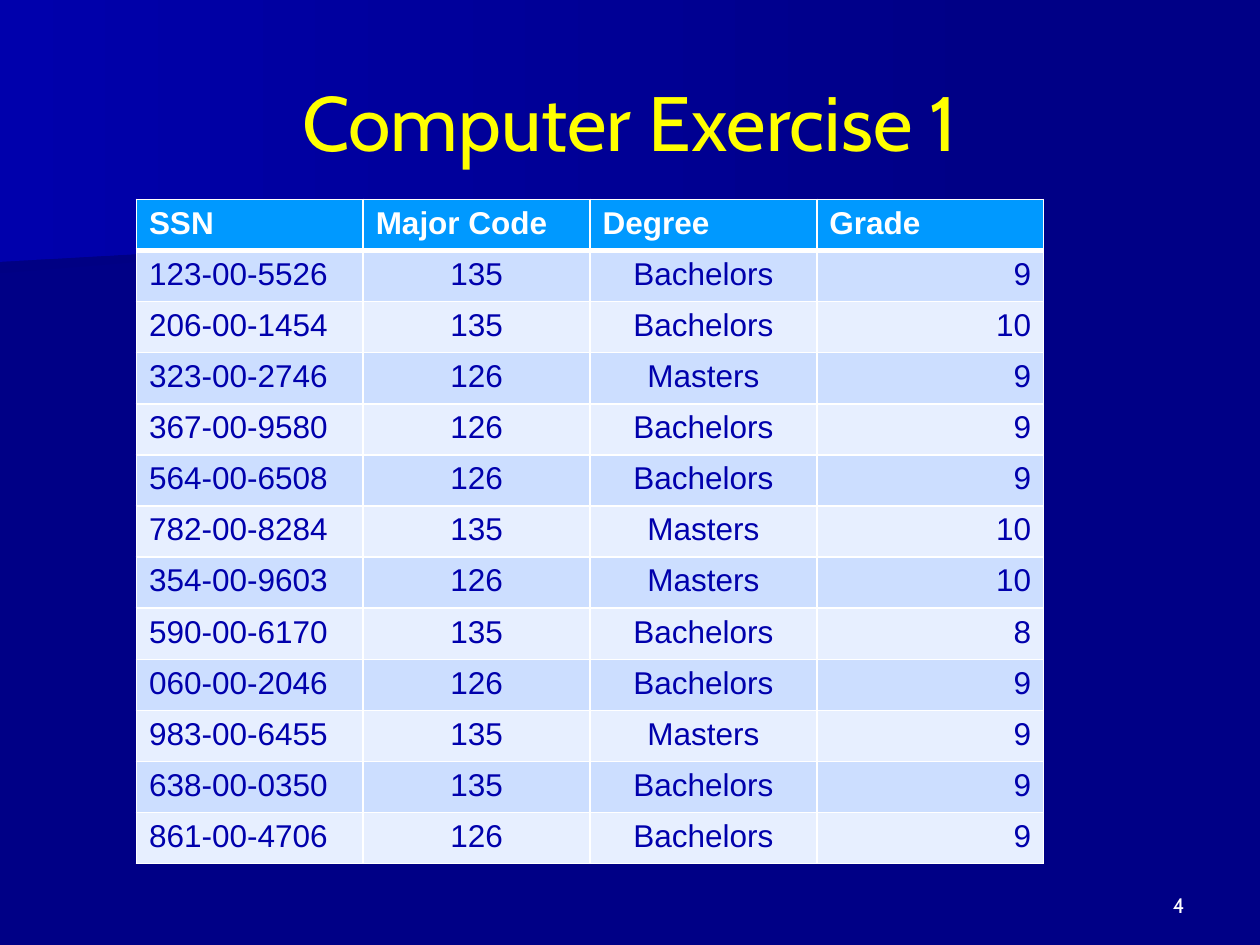
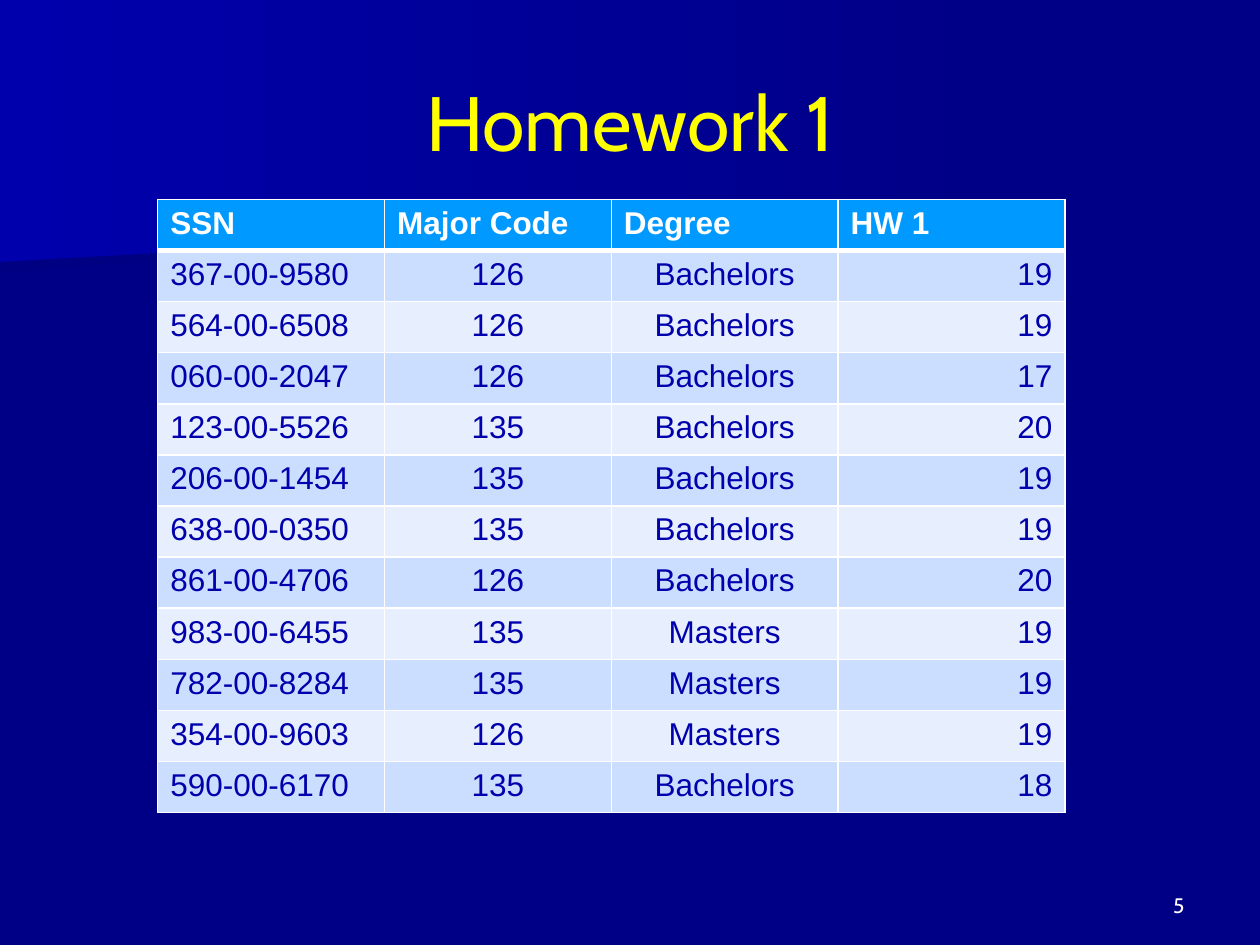
from dataclasses import dataclass

from lxml.etree import SubElement as Sub
from pptx import Presentation
from pptx.dml.color import RGBColor as RGB
from pptx.enum.text import MSO_ANCHOR as Anchor, PP_ALIGN as Align
from pptx.oxml.ns import qn
from pptx.util import Cm, Pt


@dataclass(frozen=True)
class Theme:
    """Colours, fonts and type sizes of the deck."""
    back: str = "000086"
    shade: str = "000083"
    glow: str = "0000AC"
    title: str = "FFFF00"
    white: str = "FFFFFF"
    head: str = "0099FF"
    odd: str = "CCDEFF"
    even: str = "E7EFFF"
    ink: str = "0000AC"
    sans: str = "Cabin"
    grid: str = "Arial"
    big: int = 44
    mid: int = 18
    small: int = 12


THEME = Theme()

BANDS = [
    (THEME.shade, [(19.77, 3.89), (0, 5.51), (0, 2.57), (19.79, 2.57), (19.77, 3.25)]),
    (THEME.glow, [(20.12, 4.11), (0, 5.28), (0, 0), (20.12, 0)]),
]

ALIGNS = [Align.LEFT, Align.CENTER, Align.CENTER, Align.RIGHT]

EXERCISE = [
    ("SSN", "Major Code", "Degree", "Grade"),
    ("123-00-5526", "135", "Bachelors", "9"),
    ("206-00-1454", "135", "Bachelors", "10"),
    ("323-00-2746", "126", "Masters", "9"),
    ("367-00-9580", "126", "Bachelors", "9"),
    ("564-00-6508", "126", "Bachelors", "9"),
    ("782-00-8284", "135", "Masters", "10"),
    ("354-00-9603", "126", "Masters", "10"),
    ("590-00-6170", "135", "Bachelors", "8"),
    ("060-00-2046", "126", "Bachelors", "9"),
    ("983-00-6455", "135", "Masters", "9"),
    ("638-00-0350", "135", "Bachelors", "9"),
    ("861-00-4706", "126", "Bachelors", "9"),
]

HOMEWORK = [
    ("SSN", "Major Code", "Degree", "HW 1"),
    ("367-00-9580", "126", "Bachelors", "19"),
    ("564-00-6508", "126", "Bachelors", "19"),
    ("060-00-2047", "126", "Bachelors", "17"),
    ("123-00-5526", "135", "Bachelors", "20"),
    ("206-00-1454", "135", "Bachelors", "19"),
    ("638-00-0350", "135", "Bachelors", "19"),
    ("861-00-4706", "126", "Bachelors", "20"),
    ("983-00-6455", "135", "Masters", "19"),
    ("782-00-8284", "135", "Masters", "19"),
    ("354-00-9603", "126", "Masters", "19"),
    ("590-00-6170", "135", "Bachelors", "18"),
]


def write(frame, text, font, size, color, align, bold=False):
    """Put one formatted paragraph in a text frame."""
    frame.text = text
    para = frame.paragraphs[0]
    para.alignment = align
    face = para.runs[0].font
    face.name, face.size, face.bold = font, Pt(size), bold
    face.color.rgb = RGB.from_string(color)


def add_bands(slide):
    """Draw the gradient bands and move them to the layout."""
    tree = slide.slide_layout.shapes.element
    for spot, (color, points) in enumerate(BANDS, 2):
        first, *rest = [(Cm(x), Cm(y)) for x, y in points]
        path = slide.shapes.build_freeform(*first)
        path.add_line_segments(rest, close=True)
        band = path.convert_to_shape()
        band.shadow.inherit = False
        band.line.fill.background()
        band.fill.gradient()
        band.fill.gradient_angle = 0
        for stop, tone in zip(band.fill.gradient_stops, (color, THEME.back)):
            stop.color.rgb = RGB.from_string(tone)
        tree.insert(spot, band.element)


def add_title(slide, text):
    """Place and fill the title."""
    title = slide.shapes.title
    title.left, title.top = Cm(1.27), Cm(0.85)
    title.width, title.height = Cm(22.86), Cm(3.17)
    title.text_frame.vertical_anchor = Anchor.MIDDLE
    write(title.text_frame, text, THEME.sans, THEME.big, THEME.title, Align.CENTER)


def add_edge(cell, side, width):
    """Draw a white line on one side of a cell."""
    props = cell._tc.get_or_add_tcPr()
    line = Sub(props, qn(f"a:ln{side}"), w=str(Pt(width)))
    Sub(Sub(line, qn("a:solidFill")), qn("a:srgbClr"), val=THEME.white)


def add_cell(cell, text, row, align):
    """Fill one cell by the rule for its row."""
    head = row == 0
    for side in "LRTB":
        thick = (side, row) in (("B", 0), ("T", 1))
        add_edge(cell, side, 3 if thick else 1)
    cell.fill.solid()
    tone = THEME.head if head else THEME.odd if row % 2 else THEME.even
    cell.fill.fore_color.rgb = RGB.from_string(tone)
    write(cell.text_frame, text, THEME.grid, THEME.mid,
          THEME.white if head else THEME.ink,
          Align.LEFT if head else align, head)


def add_grid(slide, left, rows):
    """Add a table with equal rows and columns."""
    high = Cm(1.03)
    table = slide.shapes.add_table(len(rows), len(ALIGNS), Cm(left), Cm(4.02),
                                   Cm(18.29), high * len(rows)).table
    for r, row in enumerate(rows):
        table.rows[r].height = high
        for c, text in enumerate(row):
            add_cell(table.cell(r, c), text, r, ALIGNS[c])


def add_number(slide, number):
    """Write the page number at the bottom right."""
    box = slide.shapes.add_textbox(Cm(18.2), Cm(17.36), Cm(5.93), Cm(1.27))
    box.text_frame.word_wrap = True
    box.text_frame.vertical_anchor = Anchor.BOTTOM
    write(box.text_frame, str(number), THEME.sans, THEME.small, THEME.white, Align.RIGHT)


def main():
    """Build and save the deck."""
    deck = Presentation()
    deck.slide_width, deck.slide_height = Cm(25.4), Cm(19.05)
    layout = deck.slide_layouts[5]
    layout.background.fill.solid()
    layout.background.fill.fore_color.rgb = RGB.from_string(THEME.back)
    pages = [("Computer Exercise 1", 2.75, EXERCISE), ("Homework 1", 3.18, HOMEWORK)]
    for number, (title, left, rows) in enumerate(pages, 4):
        slide = deck.slides.add_slide(layout)
        add_title(slide, title)
        add_grid(slide, left, rows)
        add_number(slide, number)
    add_bands(deck.slides[0])
    deck.save("out.pptx")


if __name__ == "__main__":
    main()
